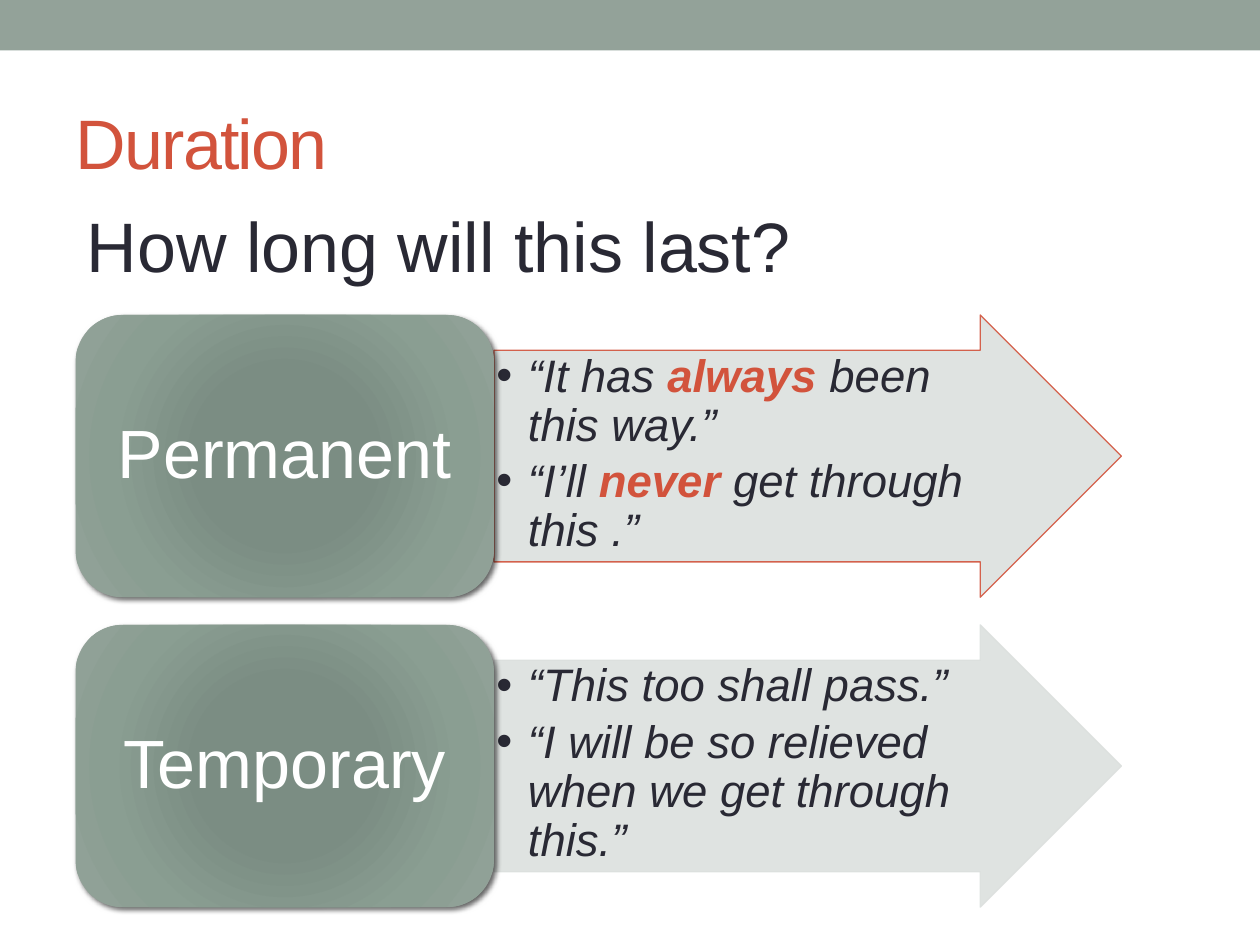
from lxml import etree
from pptx import Presentation
from pptx.dml.color import RGBColor
from pptx.enum.shapes import MSO_SHAPE as Shape
from pptx.enum.text import MSO_ANCHOR as Anchor, PP_ALIGN as Align
from pptx.oxml import parse_xml
from pptx.oxml.ns import nsdecls, qn
from pptx.util import Inches, Pt

SAGE, PALE, RUST, INK, WHITE = "93A299", "DCE0DE", "D2533C", "292934", "FFFFFF"
GRADIENT = [(0, "7B8E82"), (34, "7B8D83"), (70, "8A9E92"), (100, SAGE)]

# Rows: label, arrow outline, bullets made of (text, emphasised) parts
ROWS = [
    ("Permanent", RUST, [
        [("“It has ", False), ("always ", True), ("been this way.”", False)],
        [("“I’ll ", False), ("never", True), (" get through this .”", False)],
    ]),
    ("Temporary", PALE, [
        [("“This too shall pass.”", False)],
        [("“I will be so relieved when we get through this.”", False)],
    ]),
]


def color(value):
    return RGBColor.from_string(value)


def add_run(paragraph, text, size=26, fill=INK, bold=False, italic=False, spacing=None):
    run = paragraph.add_run()
    run.text = text
    font = run.font
    font.name, font.size, font.bold, font.italic = "Arial", Pt(size), bold, italic
    font.color.rgb = color(fill)
    if spacing is not None:
        run._r.get_or_add_rPr().set("spc", str(int(spacing * 100)))


def set_frame(frame, anchor, left, top, right, bottom):
    frame.word_wrap = True
    frame.vertical_anchor = anchor
    frame.margin_left, frame.margin_top = Inches(left), Inches(top)
    frame.margin_right, frame.margin_bottom = Inches(right), Inches(bottom)


def add_bullet(paragraph):
    properties = paragraph._p.get_or_add_pPr()
    properties.set("marL", str(Inches(0.25)))
    properties.set("indent", str(Inches(-0.25)))
    etree.SubElement(properties, qn("a:buFont")).set("typeface", "Arial")
    etree.SubElement(properties, qn("a:buChar")).set("char", "•")


def set_opacity(fill, percent):
    for element in fill._xPr.iter(qn("a:srgbClr")):
        if element.find(qn("a:alpha")) is None:
            etree.SubElement(element, qn("a:alpha")).set("val", str(percent * 1000))


class SlideBuilder:
    def __init__(self, slide):
        self.slide = slide

    def shape(self, kind, left, top, width, height, fill=None):
        shape = self.slide.shapes.add_shape(
            kind, Inches(left), Inches(top), Inches(width), Inches(height))
        shape.shadow.inherit = False
        shape.line.fill.background()
        if fill:
            shape.fill.solid()
            shape.fill.fore_color.rgb = color(fill)
        return shape

    def title(self, text):
        title = self.slide.shapes.title
        title.left, title.top = Inches(0.5), Inches(0.58)
        title.width, title.height = Inches(9), Inches(1.08)
        set_frame(title.text_frame, Anchor.MIDDLE, 0.1, 0.05, 0.1, 0.05)
        paragraph = title.text_frame.paragraphs[0]
        paragraph.alignment = Align.LEFT
        add_run(paragraph, text, size=40, fill=RUST, spacing=-1)

    def question(self, text):
        box = self.slide.shapes.add_textbox(
            Inches(0.6), Inches(1.56), Inches(9.13), Inches(0.76))
        set_frame(box.text_frame, Anchor.TOP, 0.09, 0.05, 0.09, 0.05)
        add_run(box.text_frame.paragraphs[0], text, size=40)

    def arrow(self, left, top, width, height, outline, bullets):
        arrow = self.shape(Shape.RIGHT_ARROW, left, top, width, height, PALE)
        arrow.adjustments[0], arrow.adjustments[1] = 0.75, 0.5
        arrow.line.color.rgb = color(outline)
        arrow.line.width = Pt(0.75)
        set_opacity(arrow.fill, 90)
        frame = arrow.text_frame
        set_frame(frame, Anchor.TOP, 0.02, 0.02, 0.02, 0.02)
        for index, parts in enumerate(bullets):
            paragraph = frame.add_paragraph() if index else frame.paragraphs[0]
            add_bullet(paragraph)
            paragraph.alignment = Align.LEFT
            paragraph.line_spacing = 0.9
            paragraph.space_after = Pt(4)
            paragraph.font.size = Pt(26)
            for text, strong in parts:
                add_run(paragraph, text, fill=RUST if strong else INK,
                        bold=strong, italic=True)

    def card(self, left, top, width, height, label):
        card = self.shape(Shape.ROUNDED_RECTANGLE, left, top, width, height)
        properties = card._element.spPr
        # Radial gradient, dark in the middle
        stops = "".join(f'<a:gs pos="{position * 1000}"><a:srgbClr val="{value}"/></a:gs>'
                        for position, value in GRADIENT)
        properties.find(qn("a:prstGeom")).addnext(parse_xml(
            f'<a:gradFill {nsdecls("a")} rotWithShape="1"><a:gsLst>{stops}</a:gsLst>'
            '<a:path path="circle"><a:fillToRect l="100000" t="100000" r="100000" b="100000"/>'
            '</a:path></a:gradFill>'))
        # Soft shadow to the lower right
        properties.find(qn("a:effectLst")).append(parse_xml(
            f'<a:outerShdw {nsdecls("a")} blurRad="{Pt(3)}" dist="{Pt(2)}" dir="2700000" '
            'rotWithShape="0"><a:srgbClr val="000000"><a:alpha val="60000"/></a:srgbClr>'
            '</a:outerShdw>'))
        set_frame(card.text_frame, Anchor.MIDDLE, 0.16, 0.08, 0.16, 0.08)
        paragraph = card.text_frame.paragraphs[0]
        paragraph.alignment = Align.CENTER
        paragraph.line_spacing = 0.9
        add_run(paragraph, label, size=39, fill=WHITE)


def main():
    presentation = Presentation()
    presentation.slide_width, presentation.slide_height = Inches(10), Inches(7.5)
    builder = SlideBuilder(presentation.slides.add_slide(presentation.slide_layouts[5]))

    # Top band and headings
    builder.shape(Shape.RECTANGLE, 0, 0, 10, 0.4, SAGE)
    builder.title("Duration")
    builder.question("How long will this last?")

    # One arrow and one card per row
    left, top, height, pitch = 0.6, 2.5, 2.24, 2.46
    card_width, arrow_width = 3.32, 4.98
    for index, (label, outline, bullets) in enumerate(ROWS):
        row_top = top + index * pitch
        builder.arrow(left + card_width, row_top, arrow_width, height, outline, bullets)
        builder.card(left, row_top, card_width, height, label)

    presentation.save("out.pptx")


if __name__ == "__main__":
    main()
